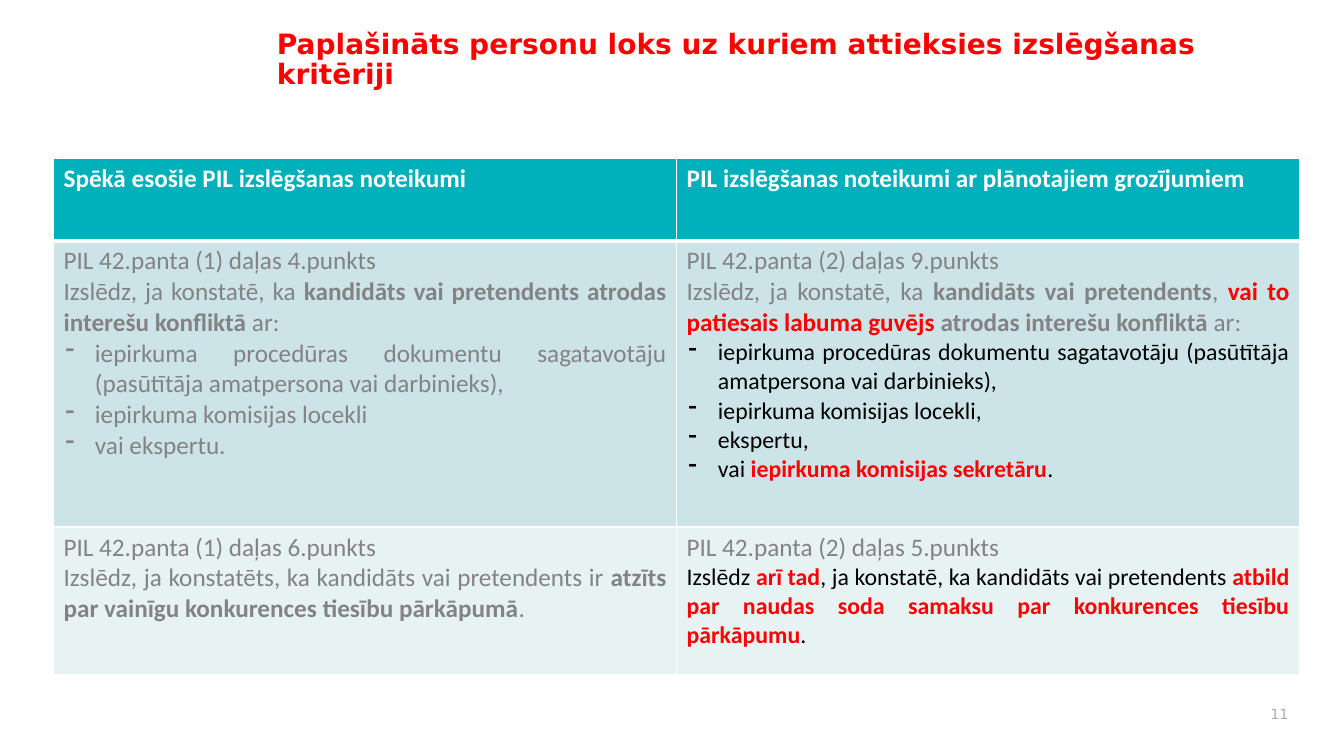
"""Build a slide comparing current and planned exclusion rules in a two-column table."""
from lxml import etree
from pptx import Presentation
from pptx import util as u
from pptx.dml.color import RGBColor
from pptx.enum import text
from pptx.oxml import ns

TITLE = "Paplašināts personu loks uz kuriem attieksies izslēgšanas kritēriji"
PAGE_NUMBER = "11"

HEADER = [
    [("left", [("header", "Spēkā esošie PIL izslēgšanas noteikumi")])],
    [("left", [("header", "PIL izslēgšanas noteikumi ar plānotajiem grozījumiem")])],
]
CONFLICT = [
    [
        ("left", [("grey", "PIL 42.panta (1) daļas 4.punkts")]),
        ("justified", [
            ("grey", "Izslēdz, ja konstatē, ka "),
            ("grey_bold", "kandidāts vai pretendents atrodas interešu konfliktā "),
            ("grey", "ar:"),
        ]),
        ("bullet", [("grey", "iepirkuma procedūras dokumentu sagatavotāju "
                             "(pasūtītāja amatpersona vai darbinieks), ")]),
        ("bullet", [("grey", "iepirkuma komisijas locekli")]),
        ("bullet", [("grey", "vai ekspertu.")]),
    ],
    [
        ("left", [("grey", "PIL 42.panta (2) daļas 9.punkts")]),
        ("justified", [
            ("grey", "Izslēdz, ja konstatē, ka "),
            ("grey_bold", "kandidāts vai pretendents"),
            ("grey", ", "),
            ("red_large", "vai to patiesais labuma guvējs "),
            ("grey_bold", "atrodas interešu konfliktā"),
            ("grey", " ar:"),
        ]),
        ("bullet", [("black", "iepirkuma procedūras dokumentu sagatavotāju "
                              "(pasūtītāja amatpersona vai darbinieks), ")]),
        ("bullet", [("black", "iepirkuma komisijas locekli,")]),
        ("bullet", [("black", "ekspertu,")]),
        ("bullet", [("black", "vai "), ("red", "iepirkuma komisijas sekretāru"), ("black", ".")]),
    ],
]
COMPETITION = [
    [
        ("justified", [("grey", "PIL 42.panta (1) daļas 6.punkts")]),
        ("justified", [
            ("grey", "Izslēdz, ja konstatēts, ka kandidāts vai pretendents ir "),
            ("grey_bold", "atzīts par vainīgu konkurences tiesību pārkāpumā"),
            ("grey", "."),
        ]),
    ],
    [
        ("justified", [("grey", "PIL 42.panta (2) daļas 5.punkts")]),
        ("justified", [
            ("black", "Izslēdz "),
            ("red", "arī tad"),
            ("black", ", ja konstatē, ka kandidāts vai pretendents "),
            ("red", "atbild par naudas soda samaksu par konkurences tiesību pārkāpumu"),
            ("black", "."),
        ]),
    ],
]
ROWS = [
    {"height": 2.08, "fill": "header_fill", "cells": HEADER},
    {"height": 7.21, "fill": "band_dark", "cells": CONFLICT},
    {"height": 3.73, "fill": "band_light", "cells": COMPETITION},
]

BODY, DISPLAY = "Calibri", "DejaVu Sans"
THEME = {
    "colours": {
        "white": "FFFFFF", "red": "FF0000", "grey": "838386", "black": "000000",
        "pale": "ADADAF", "header_fill": "00B0BA", "band_dark": "CCE4E7", "band_light": "E7F2F3",
    },
    "styles": {
        "title": ("red", {"name": DISPLAY, "size": u.Pt(20), "bold": True}),
        "number": ("pale", {"name": DISPLAY, "size": u.Pt(10), "bold": False}),
        "header": ("white", {"name": BODY, "size": u.Pt(18), "bold": True}),
        "grey": ("grey", {"name": BODY, "size": u.Pt(18), "bold": False}),
        "grey_bold": ("grey", {"name": BODY, "size": u.Pt(18), "bold": True}),
        "red_large": ("red", {"name": BODY, "size": u.Pt(18), "bold": True}),
        "red": ("red", {"name": BODY, "size": u.Pt(17), "bold": True}),
        "black": ("black", {"name": BODY, "size": u.Pt(17), "bold": False}),
    },
    "paragraphs": {
        "title": {"alignment": text.PP_ALIGN.LEFT, "line_spacing": 0.9},
        "left": {"alignment": text.PP_ALIGN.LEFT},
        "right": {"alignment": text.PP_ALIGN.RIGHT},
        "justified": {"alignment": text.PP_ALIGN.JUSTIFY},
        "bullet": {"alignment": text.PP_ALIGN.JUSTIFY},
    },
}
TABLE_LEFT, TABLE_TOP, COLUMN_WIDTH = 1.35, 3.99, 15.7
BULLET_INDENT = u.Cm(0.79)


def colour(name):
    return RGBColor.from_string(THEME["colours"][name])


def apply(target, values):
    for name, value in values.items():
        setattr(target, name, value)


def write(frame, paragraphs):
    for index, (kind, runs) in enumerate(paragraphs):
        paragraph = frame.add_paragraph() if index else frame.paragraphs[0]
        apply(paragraph, THEME["paragraphs"][kind])
        if kind == "bullet":
            properties = paragraph._p.get_or_add_pPr()
            properties.set("marL", str(BULLET_INDENT))
            properties.set("indent", str(-BULLET_INDENT))
            etree.SubElement(properties, ns.qn("a:buChar")).set("char", "⁃")
        for style, words in runs:
            run = paragraph.add_run()
            run.text = words
            colour_name, font = THEME["styles"][style]
            apply(run.font, font)
            run.font.color.rgb = colour(colour_name)


def add_text(slide, box, anchor, paragraphs):
    frame = slide.shapes.add_textbox(*map(u.Cm, box)).text_frame
    apply(frame, {"word_wrap": True, "vertical_anchor": anchor})
    write(frame, paragraphs)


def add_borders(cell, row_index):
    properties = cell._tc.get_or_add_tcPr()
    for edge in "LRTB":
        thick = (edge, row_index) in (("B", 0), ("T", 1))
        line = etree.SubElement(properties, ns.qn(f"a:ln{edge}"))
        line.set("w", str(u.Pt(3 if thick else 1)))
        fill = etree.SubElement(line, ns.qn("a:solidFill"))
        etree.SubElement(fill, ns.qn("a:srgbClr")).set("val", THEME["colours"]["white"])


def add_comparison(slide):
    columns = len(HEADER)
    height = sum(row["height"] for row in ROWS)
    box = map(u.Cm, (TABLE_LEFT, TABLE_TOP, columns * COLUMN_WIDTH, height))
    table = slide.shapes.add_table(len(ROWS), columns, *box).table
    table.horz_banding = False
    for column in table.columns:
        column.width = u.Cm(COLUMN_WIDTH)
    for row_index, row in enumerate(ROWS):
        table.rows[row_index].height = u.Cm(row["height"])
        for column_index, paragraphs in enumerate(row["cells"]):
            cell = table.cell(row_index, column_index)
            add_borders(cell, row_index)
            cell.fill.solid()
            cell.fill.fore_color.rgb = colour(row["fill"])
            write(cell.text_frame, paragraphs)


def main():
    presentation = Presentation()
    apply(presentation, {"slide_width": u.Cm(33.87), "slide_height": u.Cm(19.05)})
    slide = presentation.slides.add_slide(presentation.slide_layouts[6])
    add_text(slide, (6.73, 0.64, 25.22, 2.87), text.MSO_ANCHOR.TOP,
             [("title", [("title", TITLE)])])
    add_comparison(slide)
    add_text(slide, (31.17, 17.58, 1.55, 0.84), text.MSO_ANCHOR.MIDDLE,
             [("right", [("number", PAGE_NUMBER)])])
    presentation.save("out.pptx")


if __name__ == "__main__":
    main()
